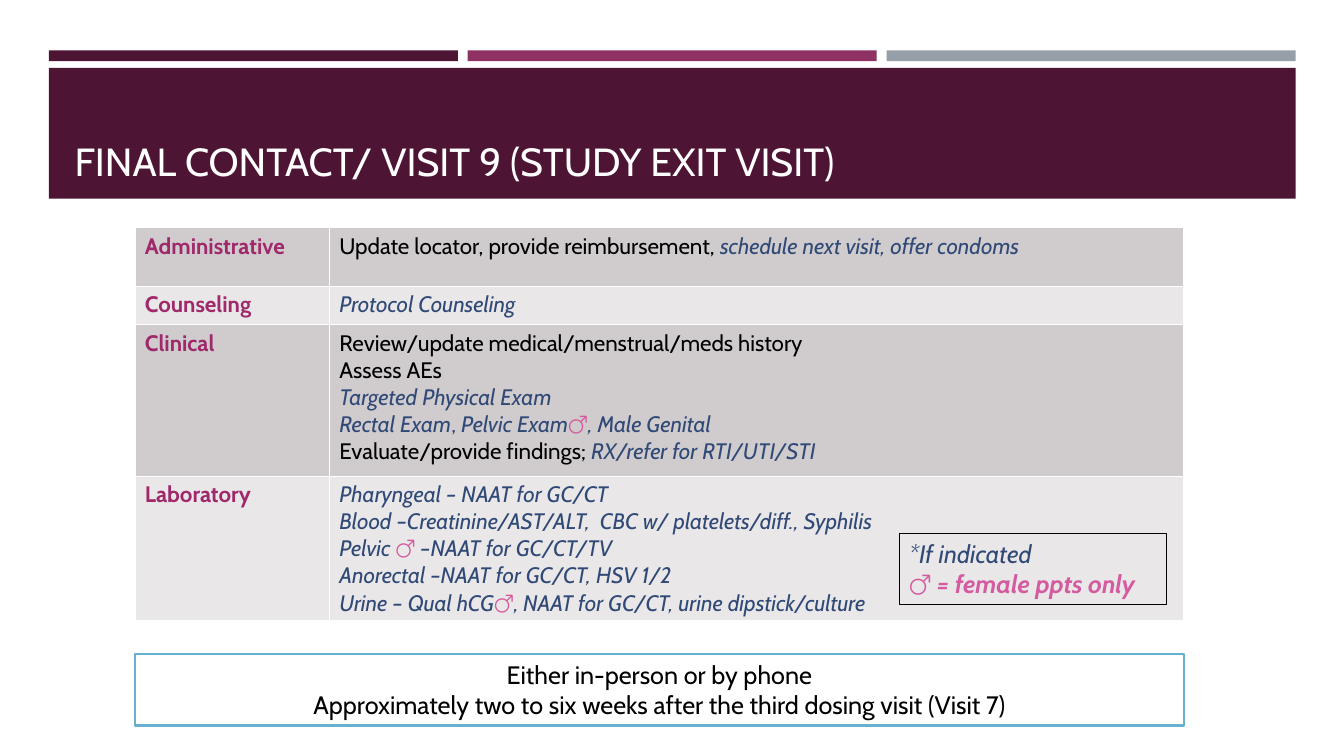
from lxml.etree import SubElement
from pptx import Presentation
from pptx.dml.color import RGBColor
from pptx.enum.shapes import MSO_SHAPE
from pptx.enum.text import MSO_ANCHOR, PP_ALIGN
from pptx.oxml.ns import qn
from pptx.util import Cm, Pt

PLUM, MAGENTA, GREY = "4D1434", "903163", "969FA7"
WHITE, BLACK, SKY = "FFFFFF", "000000", "66B1CE"
ROW_FILLS = ("D0CCCE", "E9E7E8")

# Text formats: required task, task if indicated, female participants only
REQUIRED = {"color": BLACK}
INDICATED = {"color": "304976", "italic": True}
INDICATED_UPRIGHT = {"color": "304976"}
FEMALE = {"color": "D45B9F"}
CATEGORY = {"color": "9F296B", "bold": True}

# Each category holds its paragraphs, each paragraph its (text, format) runs
VISIT_TASKS = [
    ("Administrative", [
        [("Update locator, provide reimbursement, ", REQUIRED),
         ("schedule next visit, offer condoms", INDICATED)]]),
    ("Counseling", [
        [("Protocol Counseling", INDICATED)]]),
    ("Clinical", [
        [("Review/update medical/menstrual/meds history", REQUIRED)],
        [("Assess AEs", REQUIRED)],
        [("Targeted Physical Exam", INDICATED)],
        [("Rectal Exam", INDICATED), (", ", INDICATED_UPRIGHT),
         ("Pelvic Exam", INDICATED), ("♂", FEMALE),
         (", Male Genital", INDICATED)],
        [("Evaluate/provide findings; ", REQUIRED),
         ("RX/refer for RTI/UTI/STI", INDICATED)]]),
    ("Laboratory", [
        [("Pharyngeal – NAAT for GC/CT", INDICATED)],
        [("Blood –Creatinine/AST/ALT,  CBC w/ platelets/diff., Syphilis",
          INDICATED)],
        [("Pelvic ", INDICATED), ("♂ ", FEMALE),
         ("–NAAT for GC/CT/TV", INDICATED)],
        [("Anorectal –NAAT for GC/CT, HSV 1/2", INDICATED)],
        [("Urine – Qual hCG", INDICATED), ("♂", FEMALE), (",", INDICATED),
         (" ", {**INDICATED, "size": 14}),
         ("NAAT for GC/CT, urine dipstick/culture", INDICATED)]]),
]


def rgb(color):
    return RGBColor.from_string(color)


def add_run(paragraph, text, size=16, color=BLACK, bold=False, italic=False):
    run = paragraph.add_run()
    run.text = text
    font = run.font
    font.name, font.size = "Cabin", Pt(size)
    font.bold, font.italic = bold, italic
    font.color.rgb = rgb(color)


def write(frame, paragraphs, align=PP_ALIGN.LEFT, anchor=MSO_ANCHOR.TOP, size=16):
    frame.word_wrap = True
    frame.vertical_anchor = anchor
    for index, runs in enumerate(paragraphs):
        paragraph = frame.add_paragraph() if index else frame.paragraphs[0]
        paragraph.alignment = align
        for text, style in runs:
            if text == "\n":
                paragraph.add_line_break()
            else:
                add_run(paragraph, text, **{"size": size, **style})


def add_box(slide, left, top, width, height, fill=None, line=None, weight=1):
    box = slide.shapes.add_shape(
        MSO_SHAPE.RECTANGLE, Cm(left), Cm(top), Cm(width), Cm(height))
    box.shadow.inherit = False
    if fill:
        box.fill.solid()
        box.fill.fore_color.rgb = rgb(fill)
    else:
        box.fill.background()
    if line:
        box.line.color.rgb = rgb(line)
        box.line.width = Pt(weight)
    else:
        box.line.fill.background()
    return box


def add_header(slide, left, top, width, height):
    # Three accent bars across the full width
    gap = 0.25
    bar_width = (width - 2 * gap) / 3
    for column, color in enumerate((PLUM, MAGENTA, GREY)):
        add_box(slide, left + column * (bar_width + gap), top,
                bar_width, 0.27, color)
    # Title band
    add_box(slide, left, top + 0.44, width, height - 0.44, PLUM)
    title = slide.shapes.add_textbox(
        Cm(left + 0.4), Cm(top + 0.69), Cm(width - 0.8), Cm(height - 0.92))
    write(title.text_frame,
          [[("FINAL CONTACT/ VISIT 9 (STUDY EXIT VISIT)", {"color": WHITE})]],
          anchor=MSO_ANCHOR.BOTTOM, size=28)


def style_cell(cell, fill):
    cell.fill.solid()
    cell.fill.fore_color.rgb = rgb(fill)
    properties = cell._tc.get_or_add_tcPr()
    for position, side in enumerate(("a:lnL", "a:lnR", "a:lnT", "a:lnB")):
        border = SubElement(properties, qn(side), w=str(Pt(1)))
        solid = SubElement(border, qn("a:solidFill"))
        SubElement(solid, qn("a:srgbClr"), val=WHITE)
        properties.insert(position, border)


def add_task_table(slide, left, top, width, height):
    category_width = 4.9
    row_heights = (1.47, 0.97, 3.82, height - 6.26)
    table = slide.shapes.add_table(
        len(VISIT_TASKS), 2, Cm(left), Cm(top), Cm(width), Cm(height)).table
    table.first_row = table.horz_banding = False
    table.columns[0].width = Cm(category_width)
    table.columns[1].width = Cm(width - category_width)
    for row, (category, tasks) in enumerate(VISIT_TASKS):
        table.rows[row].height = Cm(row_heights[row])
        for column, content in enumerate(([[(category, CATEGORY)]], tasks)):
            cell = table.cell(row, column)
            style_cell(cell, ROW_FILLS[row % 2])
            write(cell.text_frame, content)


def add_contact_note(slide, left, top, width, height):
    note = add_box(slide, left, top, width, height, WHITE, SKY, 1.75)
    write(note.text_frame,
          [[("Either in-person or by phone", REQUIRED), ("\n", REQUIRED),
            ("Approximately two to six weeks after the third dosing visit (Visit 7)",
             REQUIRED)]],
          align=PP_ALIGN.CENTER, size=18)


def add_legend(slide, left, top, width, height):
    legend = add_box(slide, left, top, width, height, line=BLACK, weight=0.75)
    write(legend.text_frame,
          [[("*If indicated", INDICATED)],
           [("♂ ", {**FEMALE, "bold": True}),
            ("= female ppts only", {**FEMALE, "bold": True, "italic": True})]],
          size=18)


def main():
    presentation = Presentation()
    presentation.slide_width, presentation.slide_height = Cm(33.87), Cm(19.05)
    slide = presentation.slides.add_slide(presentation.slide_layouts[6])
    add_header(slide, 1.23, 1.27, 31.42, 3.74)
    add_task_table(slide, 3.4, 5.74, 26.44, 9.91)
    add_contact_note(slide, 3.4, 16.48, 26.44, 1.8)
    add_legend(slide, 22.66, 13.44, 6.73, 1.8)
    presentation.save("out.pptx")


if __name__ == "__main__":
    main()
